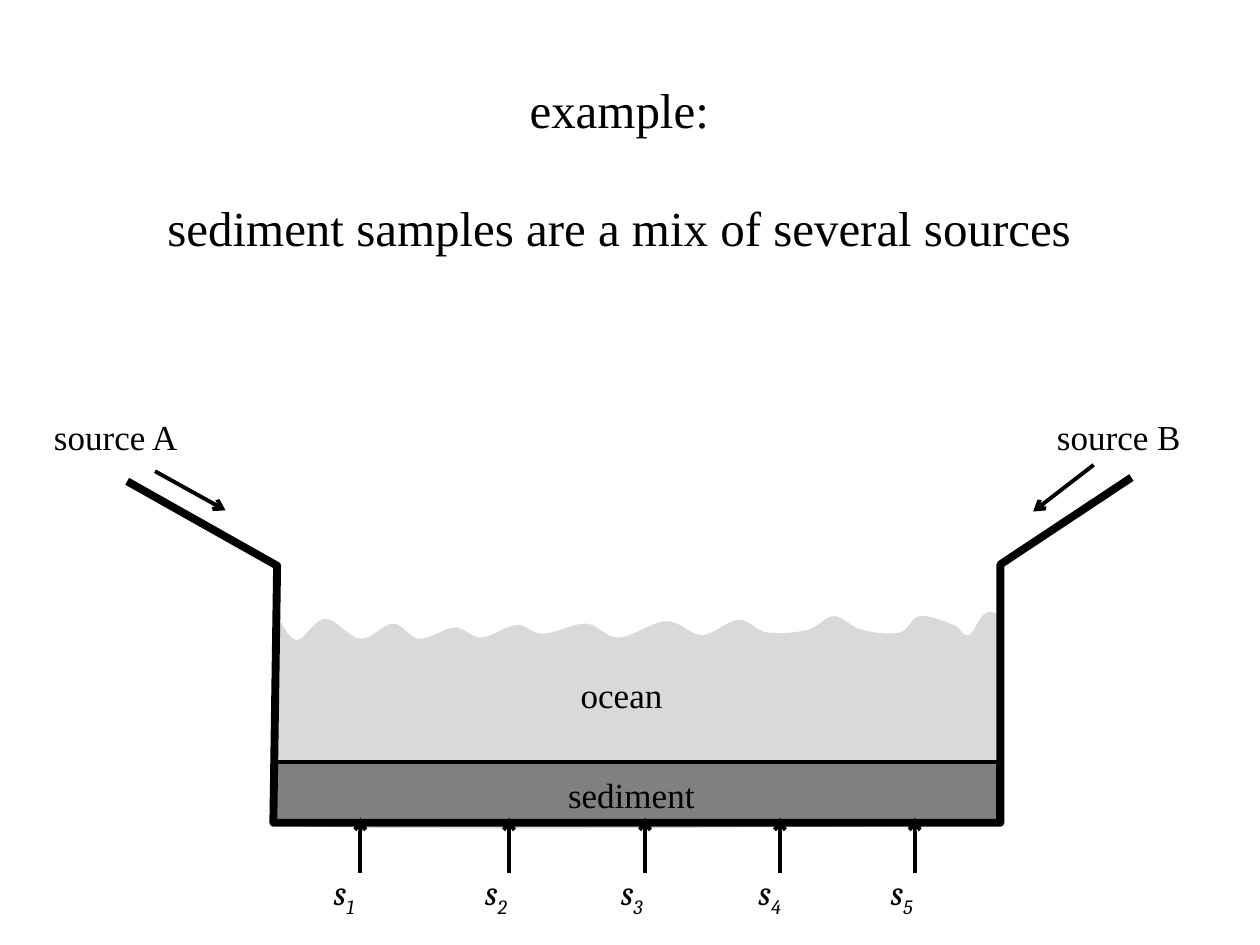
from lxml.etree import SubElement
from pptx import Presentation
from pptx.dml.color import RGBColor
from pptx.enum.shapes import MSO_CONNECTOR, MSO_SHAPE
from pptx.enum.text import MSO_AUTO_SIZE, PP_ALIGN
from pptx.oxml.ns import qn
from pptx.util import Inches, Pt

COLORS = {"ink": "000000", "ocean": "D9D9D9", "sediment": "808080"}
LABEL = {"name": "Times New Roman", "size": Pt(20)}
TITLE = {"name": "Times New Roman", "size": Pt(28)}
SAMPLE = {"name": "Cambria", "size": Pt(20), "italic": True}

# Crests and troughs of the water surface, left to right
WAVES = [
    (2.19, 4.87), (2.35, 5.08), (2.58, 4.91), (2.86, 5.07), (3.12, 4.95),
    (3.33, 5.07), (3.61, 4.98), (3.82, 5.06), (4.1, 4.96), (4.31, 5.03),
    (4.65, 4.95), (4.91, 5.06), (5.29, 4.93), (5.57, 5.04), (5.86, 4.92),
    (6.09, 5.02), (6.41, 5), (6.62, 4.89), (6.84, 5), (7.14, 5.02),
    (7.3, 4.89), (7.57, 4.96), (7.69, 5.04), (7.92, 4.88),
]
# Points that only steer the slope at both ends of the surface
WAVE_LEAD, WAVE_TRAIL = (2.23, 4.96), (8.53, 5.64)
# Right side, bottom and left side: two control points and an end point each
OCEAN_BED = [
    (7.94, 5.21), (7.94, 6.11), (7.91, 6.55),
    (6.84, 6.56), (3.06, 6.6), (2.15, 6.55),
    (2.18, 5.88), (2.19, 5.65), (2.2, 4.95),
]
BASIN = [(1.01, 3.82), (2.2, 4.49), (2.17, 6.53),
         (7.94, 6.53), (7.94, 4.48), (8.98, 3.79)]

# Arrow position and label left edge of each sample
SAMPLES = [(2.86, 2.55), (4.04, 3.75), (5.12, 4.83), (6.19, 5.92), (7.26, 6.97)]


def color(key):
    return RGBColor.from_string(COLORS[key])


def wave_points():
    """Start point, then two control points and an end point per curve."""
    guides = [WAVE_LEAD, *WAVES, WAVE_TRAIL]
    points = [WAVES[0]]
    for a, b, c, d in zip(guides, guides[1:], guides[2:], guides[3:]):
        leave = tuple(q + (r - p) / 6 for p, q, r in zip(a, b, c))
        arrive = tuple(r - (s - q) / 6 for q, r, s in zip(b, c, d))
        points += [leave, arrive, c]
    return points


def style_shape(shape, fill=None, line_width=None):
    shape.shadow.inherit = False
    if fill:
        shape.fill.solid()
        shape.fill.fore_color.rgb = color(fill)
    else:
        shape.fill.background()
    if line_width:
        shape.line.color.rgb = color("ink")
        shape.line.width = Pt(line_width)
    else:
        shape.line.fill.background()


def add_outline(page, points, close, **style):
    corners = [(Inches(x), Inches(y)) for x, y in points]
    builder = page.shapes.build_freeform(*corners[0])
    builder.add_line_segments(corners[1:], close=close)
    outline = builder.convert_to_shape()
    style_shape(outline, **style)
    return outline


def bend_segments(outline):
    """Turn each three straight segments into one Bezier curve."""
    segments = list(outline._element.iter(qn("a:lnTo")))
    for first, second, third in zip(segments[::3], segments[1::3], segments[2::3]):
        outline_route = first.getparent()
        curve = SubElement(outline_route, qn("a:cubicBezTo"))
        first.addprevious(curve)
        for segment in (first, second, third):
            curve.append(segment[0])
            outline_route.remove(segment)


def add_ocean(page):
    ocean = add_outline(page, wave_points() + OCEAN_BED, True, fill="ocean")
    bend_segments(ocean)


def add_sediment(page):
    sediment = page.shapes.add_shape(
        MSO_SHAPE.RECTANGLE, Inches(2.17), Inches(6.05), Inches(5.75), Inches(0.47))
    style_shape(sediment, fill="sediment", line_width=2)


def add_arrow(page, start, end):
    arrow = page.shapes.add_connector(
        MSO_CONNECTOR.STRAIGHT, *(Inches(value) for value in (*start, *end)))
    arrow.line.color.rgb = color("ink")
    arrow.line.width = Pt(2.25)
    SubElement(arrow.line._get_or_add_ln(), qn("a:tailEnd"), type="arrow")
    SubElement(arrow._element.spPr, qn("a:effectLst"))


def add_span(para, text, font_format):
    span = para.add_run()
    span.text = text
    span.font.color.rgb = color("ink")
    for name, value in font_format.items():
        setattr(span.font, name, value)
    return span


def add_box(page, left, top, width, height):
    box = page.shapes.add_textbox(
        *(Inches(value) for value in (left, top, width, height)))
    box.text_frame.word_wrap = True
    box.text_frame.auto_size = MSO_AUTO_SIZE.SHAPE_TO_FIT_TEXT
    return box.text_frame


def add_label(page, text, left, top, width):
    frame = add_box(page, left, top, width, 0.44)
    add_span(frame.paragraphs[0], text, LABEL)


def add_sample_label(page, number, left):
    para = add_box(page, left, 6.86, 0.61, 0.44).paragraphs[0]
    add_span(para, "s", SAMPLE)
    subscript = add_span(para, str(number), SAMPLE)
    subscript.font._element.set("baseline", "-25000")


def add_title(page):
    frame = add_box(page, 0.58, 0.58, 8.67, 1.51)
    heading, statement = frame.paragraphs[0], frame.add_paragraph()
    add_span(heading, "example:", TITLE)
    add_span(statement, "sediment samples are a mix of several sources", TITLE)
    heading.alignment = statement.alignment = PP_ALIGN.CENTER
    statement.space_before = Pt(34)


def main():
    deck = Presentation()
    deck.slide_width, deck.slide_height = Inches(10), Inches(7.5)
    page = deck.slides.add_slide(deck.slide_layouts[6])

    # Ocean, sediment layer and basin walls
    add_ocean(page)
    add_sediment(page)
    add_outline(page, BASIN, False, line_width=4.5)

    # Sampling arrows and inflow from the sources
    for arrow_x, _ in SAMPLES:
        add_arrow(page, (arrow_x, 6.93), (arrow_x, 6.49))
    add_arrow(page, (8.68, 3.69), (8.2, 4.06))
    add_arrow(page, (1.23, 3.74), (1.79, 4.05))

    # Labels
    add_label(page, "source A", 0.33, 3.25, 1.96)
    add_label(page, "ocean", 4.51, 5.3, 1.22)
    add_label(page, "sediment", 4.41, 6.09, 1.22)
    add_label(page, "source B", 8.29, 3.25, 1.21)
    for number, (_, label_left) in enumerate(SAMPLES, start=1):
        add_sample_label(page, number, label_left)

    add_title(page)
    deck.save("out.pptx")


if __name__ == "__main__":
    main()
